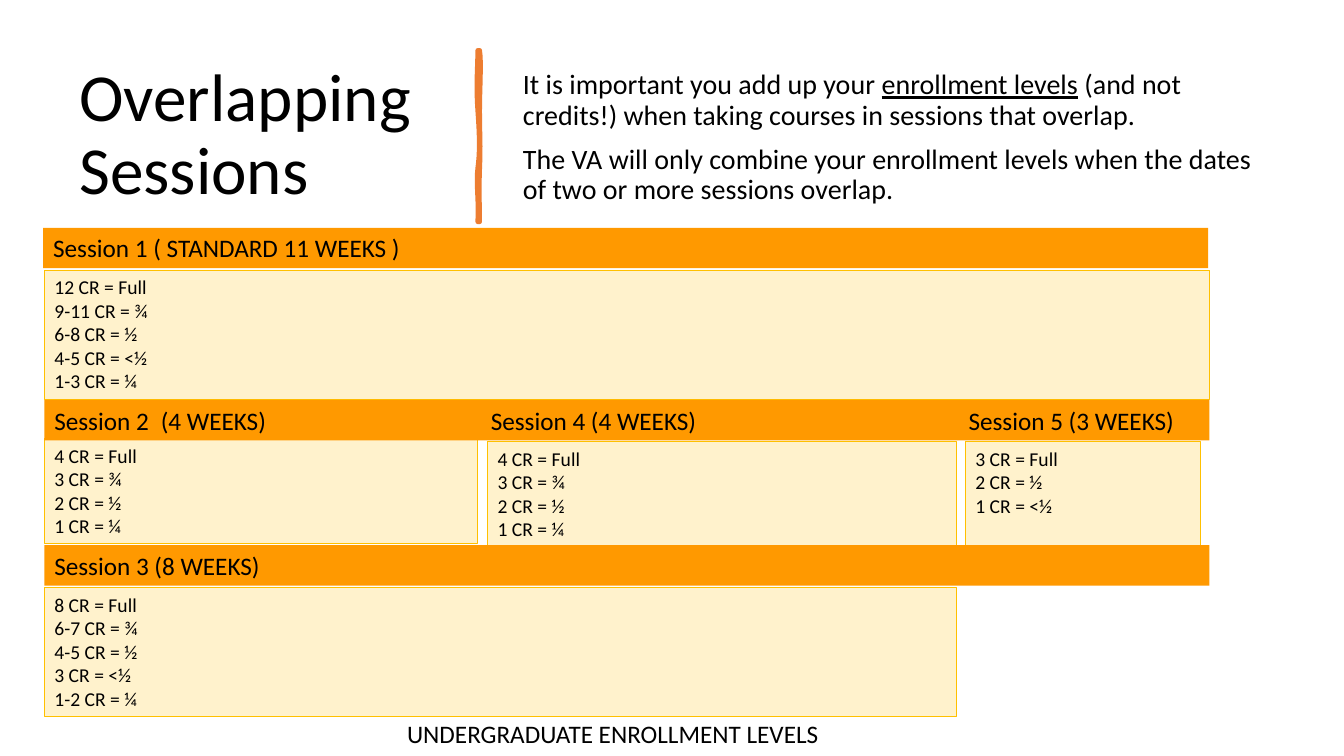
from lxml.etree import SubElement
from pptx import Presentation
from pptx.dml.color import RGBColor
from pptx.enum.shapes import MSO_SHAPE
from pptx.enum.text import MSO_ANCHOR, PP_ALIGN
from pptx.oxml.ns import qn
from pptx.util import Cm, Pt

ORANGE, CREAM, GOLD, BRUSH, BLACK = "FF9900", "FFF2CC", "FFC000", "ED7D31", "000000"


def color(hex_string):
    return RGBColor.from_string(hex_string)


def curve_points(start, curves, steps=8):
    """Sample a chain of cubic curves, each given as two controls and an end."""
    points = [start]
    for first, second, end in curves:
        begin = points[-1]
        for step in range(1, steps + 1):
            t = step / steps
            weights = ((1 - t) ** 3, 3 * t * (1 - t) ** 2, 3 * t * t * (1 - t), t ** 3)
            corners = (begin, first, second, end)
            points.append(tuple(sum(w * c[axis] for w, c in zip(weights, corners))
                                for axis in (0, 1)))
    return points


class SlideBuilder:
    font = "Calibri"

    def __init__(self, slide):
        self.slide = slide

    def style_text(self, text_frame, size, anchor=MSO_ANCHOR.TOP):
        text_frame.word_wrap = True
        text_frame.vertical_anchor = anchor
        for paragraph in text_frame.paragraphs:
            paragraph.alignment = PP_ALIGN.LEFT
            for run in paragraph.runs:
                run.font.name = self.font
                run.font.size = Pt(size)
                run.font.color.rgb = color(BLACK)

    def text(self, left, top, width, height, text, size, anchor=MSO_ANCHOR.TOP):
        shape = self.slide.shapes.add_textbox(Cm(left), Cm(top), Cm(width), Cm(height))
        shape.text_frame.text = text
        self.style_text(shape.text_frame, size, anchor)
        return shape.text_frame

    def box(self, left, top, width, height, text, size, fill, line=None):
        shape = self.slide.shapes.add_shape(
            MSO_SHAPE.RECTANGLE, Cm(left), Cm(top), Cm(width), Cm(height))
        shape.shadow.inherit = False
        shape.fill.solid()
        shape.fill.fore_color.rgb = color(fill)
        if line:
            shape.line.color.rgb = color(line)
            shape.line.width = Pt(0.75)
        else:
            shape.line.fill.background()
        shape.text_frame.text = text
        self.style_text(shape.text_frame, size)
        return shape.text_frame

    def levels(self, left, top, width, height, lines):
        return self.box(left, top, width, height, "\n".join(lines), 14, CREAM, GOLD)

    def header(self, left, top, text):
        return self.box(left, top, 29.36, 1.02, text, 18, ORANGE)

    def tab_stops(self, paragraph, positions):
        tab_list = SubElement(paragraph._p.get_or_add_pPr(), qn("a:tabLst"))
        for position in positions:
            SubElement(tab_list, qn("a:tab"), pos=str(Cm(position)), algn="l")

    def brush_stroke(self, points):
        corners = [(Cm(x), Cm(y)) for x, y in points]
        builder = self.slide.shapes.build_freeform(*corners[0])
        builder.add_line_segments(corners[1:], close=True)
        shape = builder.convert_to_shape()
        shape.shadow.inherit = False
        shape.fill.solid()
        shape.fill.fore_color.rgb = color(BRUSH)
        shape.line.color.rgb = color(BRUSH)
        shape.line.width = Pt(3.25)
        SubElement(shape.line._get_or_add_ln(), qn("a:round"))


def main():
    presentation = Presentation()
    presentation.slide_width, presentation.slide_height = Cm(33.87), Cm(19.05)
    builder = SlideBuilder(presentation.slides.add_slide(presentation.slide_layouts[6]))

    # Title, divider and introduction
    title = builder.text(1.75, 1.4, 9.5, 4.06, "Overlapping Sessions", 48, MSO_ANCHOR.MIDDLE)
    title.paragraphs[0].line_spacing = 0.9
    builder.brush_stroke(curve_points((12.09, 1.27), [
        ((12.14, 1.57), (12.09, 2.24), (12.09, 2.79)),
        ((12.09, 3.35), (12.12, 3.66), (12.09, 4.27)),
        ((12.07, 4.9), (12.09, 5.05), (12.09, 5.59)),
        ((12.07, 5.59), (12.07, 5.59), (12.04, 5.59)),
        ((12.07, 4.98), (11.99, 4.65), (12.04, 4.24)),
        ((12.09, 3.84), (12.09, 3.51), (12.04, 2.79)),
        ((11.99, 2.11), (12.04, 1.7), (12.04, 1.27)),
    ]))
    introduction = builder.text(12.93, 1.45, 19.18, 4.06, "", 20, MSO_ANCHOR.MIDDLE)
    first, second = introduction.paragraphs[0], introduction.add_paragraph()
    for part in ("It is important you add up your ", "enrollment levels",
                 " (and not credits!) when taking courses in sessions that overlap."):
        first.add_run().text = part
    first.runs[1].font.underline = True
    second.text = ("The VA will only combine your enrollment levels when the dates "
                   "of two or more sessions overlap.")
    for paragraph in (first, second):
        paragraph.line_spacing = 0.9
        paragraph.space_before = Pt(10)
    builder.style_text(introduction, 20, MSO_ANCHOR.MIDDLE)

    # Enrollment levels of each session
    four_weeks = ["4 CR = Full", "3 CR = ¾", "2 CR = ½", "1 CR = ¼"]
    builder.levels(1.12, 11.05, 10.92, 2.64, four_weeks)
    builder.levels(12.29, 11.13, 11.81, 2.64, four_weeks)
    builder.levels(1.12, 14.81, 22.99, 3.25, [
        "8 CR = Full", "6-7 CR = ¾", "4-5 CR = ½", "3 CR = <½", "1-2 CR = ¼"])
    builder.levels(24.33, 11.13, 5.92, 2.64, ["3 CR = Full", "2 CR = ½", "1 CR = <½"])
    builder.levels(1.12, 6.81, 29.36, 3.25, [
        "12 CR = Full", "9-11 CR = ¾", "6-8 CR = ½", "4-5 CR = <½", "1-3 CR = ¼"])

    # Session bars
    builder.header(1.09, 5.74, "Session 1 ( STANDARD 11 WEEKS )")
    short_sessions = builder.header(
        1.12, 10.08, "Session 2\t (4 WEEKS)\tSession 4 (4 WEEKS)\tSession 5 (3 WEEKS)")
    builder.tab_stops(short_sessions.paragraphs[0], (2.54, 11.0, 23.04))
    builder.header(1.12, 13.74, "Session 3 (8 WEEKS)")

    # Caption
    builder.text(10.01, 17.98, 14.58, 1.02, "UNDERGRADUATE ENROLLMENT LEVELS", 18)
    presentation.save("out.pptx")


if __name__ == "__main__":
    main()
